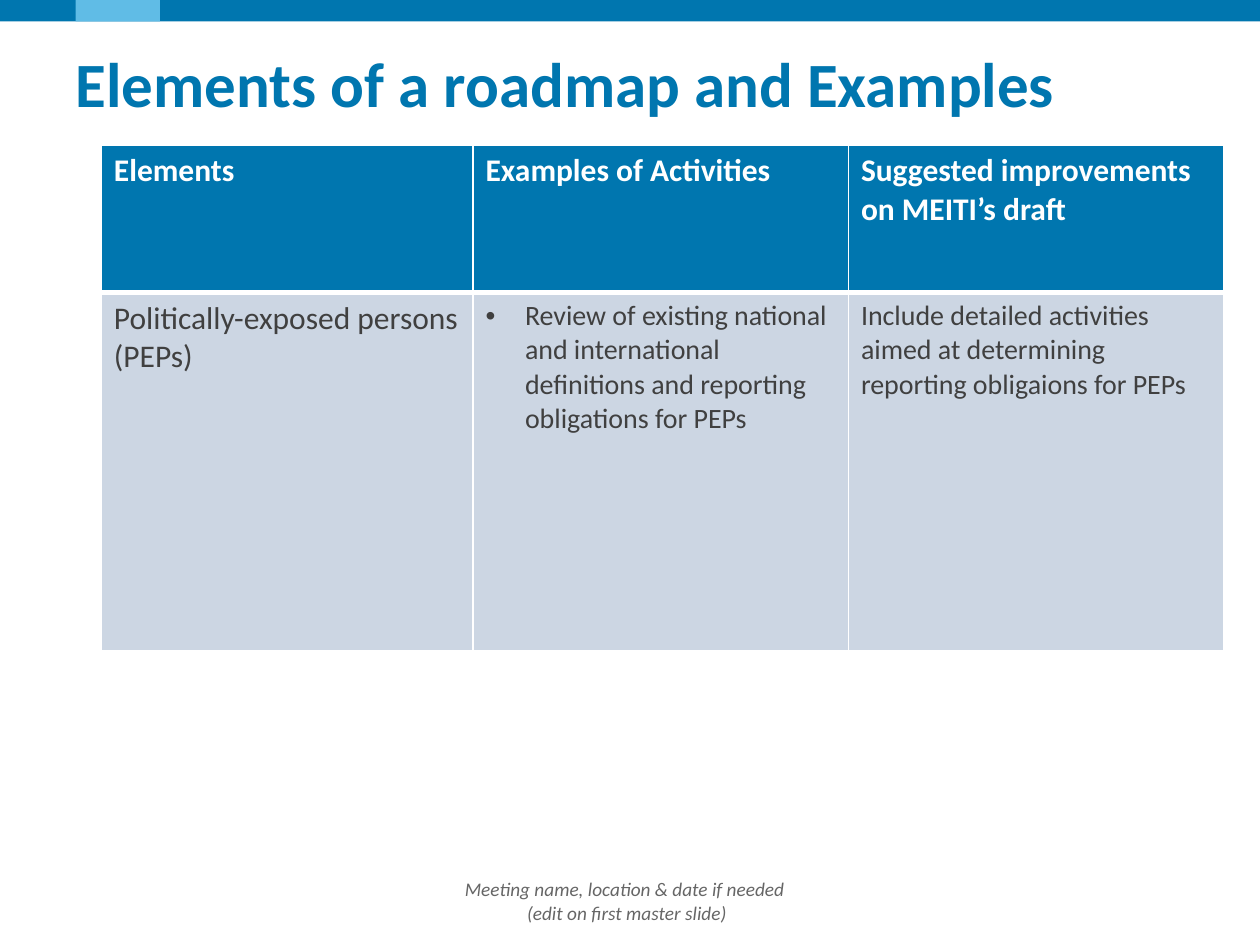
from lxml import etree
from pptx import Presentation
from pptx.dml.color import RGBColor
from pptx.enum.shapes import MSO_SHAPE
from pptx.enum.text import MSO_ANCHOR, PP_ALIGN
from pptx.oxml.ns import qn
from pptx.util import Pt

RECTANGLE = MSO_SHAPE.RECTANGLE
TOP, MIDDLE = MSO_ANCHOR.TOP, MSO_ANCHOR.MIDDLE
LEFT, CENTER = PP_ALIGN.LEFT, PP_ALIGN.CENTER
BLUE, LIGHT_BLUE, PALE = "0076AF", "60BCE6", "CCD6E3"
WHITE, DARK, GRAY = "FFFFFF", "404040", "666666"


def color(value):
    return RGBColor.from_string(value)


def write(frame, text, style):
    para = frame.paragraphs[0]
    para.text = text
    para.font.color.rgb = color(style["color"])
    for name, value in style["font"].items():
        setattr(para.font, name, value)
    return para


deck = Presentation()
deck.slide_width, deck.slide_height = Pt(720), Pt(540)
page = deck.slides.add_slide(deck.slide_layouts[6])

for left, width, fill in [(0, 720, BLUE), (43.2, 48.24, LIGHT_BLUE)]:
    bar = page.shapes.add_shape(RECTANGLE, Pt(left), Pt(-0.72), Pt(width), Pt(12.96))
    bar.shadow.inherit = False
    bar.fill.solid()
    bar.fill.fore_color.rgb = color(fill)
    bar.line.fill.background()

footer_style = {"color": GRAY, "font": {"name": "Calibri", "size": Pt(11), "italic": True}}
title_style = {"color": BLUE, "font": {"name": "Calibri", "size": Pt(36), "bold": True}}
text_boxes = [
    ((175, 500.4, 366.5, 28.8), MIDDLE, CENTER, footer_style,
     "Meeting name, location & date if needed \v(edit on first master slide)"),
    ((43.2, 21.6, 620, 51.84), TOP, LEFT, title_style,
     "Elements of a roadmap and Examples"),
]
for bounds, anchor, alignment, style, text in text_boxes:
    box = page.shapes.add_textbox(*map(Pt, bounds))
    frame = box.text_frame
    frame.word_wrap = True
    frame.vertical_anchor = anchor
    frame.margin_left = frame.margin_right = 0
    write(frame, text, style).alignment = alignment

column_widths = [212.4, 214.5, 214.5]
row_heights = [84.2, 204.4]
rows = [
    ["Elements", "Examples of Activities", "Suggested improvements on MEITI’s draft"],
    ["Politically-exposed persons (PEPs)",
     "Review of existing national and international definitions and reporting obligations for PEPs",
     "Include detailed activities aimed at determining reporting obligaions for PEPs"],
]
table = page.shapes.add_table(
    2, 3, Pt(57.9), Pt(83.1), Pt(sum(column_widths)), Pt(sum(row_heights))
).table
table.first_row = table.horz_banding = False
for column, width in zip(table.columns, column_widths):
    column.width = Pt(width)
for row, height in zip(table.rows, row_heights):
    row.height = Pt(height)

for row_index, texts in enumerate(rows):
    header = row_index == 0
    border_widths = {"L": 1, "R": 1, "T": 1 if header else 3, "B": 3 if header else 1}
    for column_index, text in enumerate(texts):
        cell = table.cell(row_index, column_index)
        properties = cell._tc.get_or_add_tcPr()
        for side, width in border_widths.items():
            border = etree.SubElement(properties, qn(f"a:ln{side}"), w=str(Pt(width)))
            border_fill = etree.SubElement(border, qn("a:solidFill"))
            etree.SubElement(border_fill, qn("a:srgbClr"), val=WHITE)
        cell.fill.solid()
        cell.fill.fore_color.rgb = color(BLUE if header else PALE)

        para = cell.text_frame.paragraphs[0]
        if not header and column_index == 1:
            paragraph_properties = para._p.get_or_add_pPr()
            paragraph_properties.set("marL", str(Pt(22.5)))
            paragraph_properties.set("indent", str(Pt(-22.5)))
            etree.SubElement(paragraph_properties, qn("a:buFont"), typeface="Arial")
            etree.SubElement(paragraph_properties, qn("a:buChar"), char="•")
        size = 18 if header or column_index == 0 else 16
        write(cell.text_frame, text, {
            "color": WHITE if header else DARK,
            "font": {"name": "Calibri", "size": Pt(size), "bold": header},
        })

deck.save("out.pptx")
